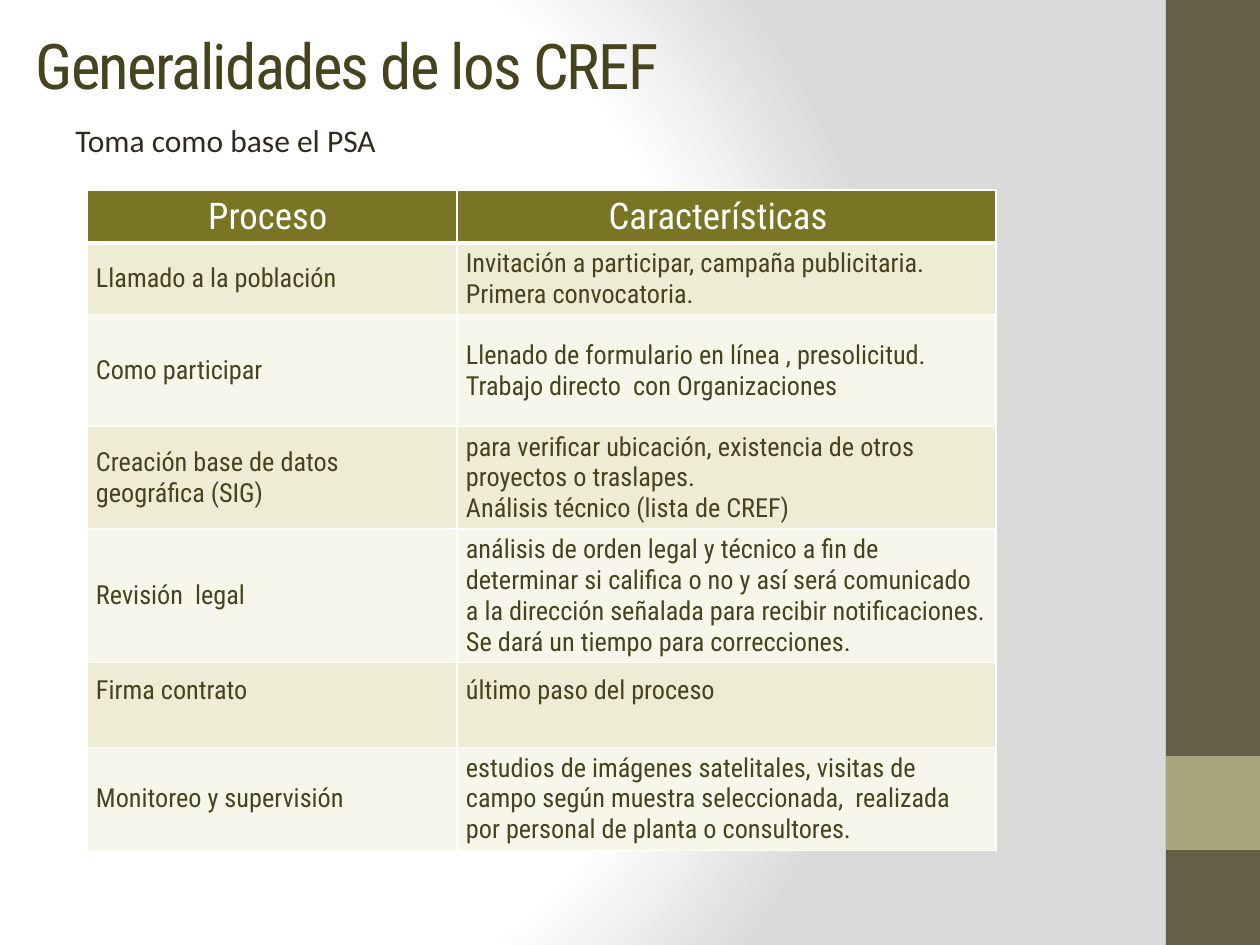
import pptx
import pptx.util
import pptx.oxml
import pptx.dml.color
import pptx.enum.shapes
import pptx.enum.text
import lxml.etree

RGB = pptx.dml.color.RGBColor
ALIGN = pptx.enum.text.PP_ALIGN
MIDDLE = pptx.enum.text.MSO_ANCHOR.MIDDLE
FIT = pptx.enum.text.MSO_AUTO_SIZE

WHITE = RGB(0xFF, 0xFF, 0xFF)
GREY = RGB(0xDA, 0xDA, 0xDA)
BROWN = RGB(0x67, 0x5E, 0x47)
SAGE = RGB(0xA9, 0xA5, 0x7C)
OLIVE = RGB(0x7A, 0x74, 0x25)
CREAM = RGB(0xEE, 0xEC, 0xD4)
PALE = RGB(0xF7, 0xF6, 0xEB)
MOSS = RGB(0x46, 0x43, 0x1F)
DARK = RGB(0x2F, 0x2B, 0x20)

HEAD = "Roboto Condensed"
BODY = "Calibri"
SCALE = 914400 / 126
NS = "http://schemas.openxmlformats.org/drawingml/2006/main"
NS_P = "http://schemas.openxmlformats.org/presentationml/2006/main"

COLS = [370, 539]
HEIGHTS = [52, 71, 112, 101, 133, 85, 103]
LOW_ROW = 5
ROWS = [
    (["Proceso "], ["Características  "]),
    (["Llamado a la población"],
     ["Invitación a participar, campaña publicitaria. Primera convocatoria."]),
    (["Como participar"],
     ["Llenado de formulario en línea , presolicitud.",
      "Trabajo directo  con Organizaciones"]),
    (["Creación base de datos geográfica (SIG)"],
     ["para verificar ubicación, existencia de otros  proyectos o traslapes.",
      "Análisis técnico (lista de CREF)"]),
    (["Revisión  legal"],
     ["análisis de orden legal y técnico a fin de determinar si califica o no "
      "y así será comunicado a la dirección señalada para recibir "
      "notificaciones. Se dará un tiempo para correcciones."]),
    (["Firma contrato"], ["último paso del proceso"]),
    (["Monitoreo y supervisión"],
     ["estudios de imágenes satelitales, visitas de campo según muestra "
      "seleccionada,  realizada por personal de planta o consultores."]),
]


def px(n):
    return pptx.util.Emu(round(n * SCALE))


def place(item, *box):
    item.left, item.top, item.width, item.height = map(px, box)


def write(frame, lines, size, font, color, align=ALIGN.LEFT):
    for i, line in enumerate(lines):
        para = frame.add_paragraph() if i else frame.paragraphs[0]
        para.alignment = align
        run = para.add_run()
        run.text = line
        run.font.size = pptx.util.Pt(size)
        run.font.name = font
        run.font.bold = False
        run.font.color.rgb = color


def paint_back(slide):
    stops = "".join(
        f'<a:gs pos="{pos * 1000}"><a:srgbClr val="{color}"/></a:gs>'
        for pos, color in [(0, WHITE), (75, WHITE), (100, GREY)])
    back = pptx.oxml.parse_xml(
        f'<p:bg xmlns:p="{NS_P}" xmlns:a="{NS}"><p:bgPr>'
        f'<a:gradFill rotWithShape="1"><a:gsLst>{stops}</a:gsLst>'
        '<a:path path="circle"><a:fillToRect l="20000" t="50000" '
        'r="100000" b="50000"/></a:path></a:gradFill>'
        '<a:effectLst/></p:bgPr></p:bg>')
    slide._element.cSld.insert(0, back)


def add_band(slide, color, *box):
    band = slide.shapes.add_shape(
        pptx.enum.shapes.MSO_SHAPE.RECTANGLE, *map(px, box))
    band.shadow.inherit = False
    band.fill.solid()
    band.fill.fore_color.rgb = color
    band.line.fill.background()


def add_title(slide):
    title = slide.shapes.title
    place(title, 23, 16, 1040, 96)
    frame = title.text_frame
    frame.auto_size = FIT.NONE
    frame.vertical_anchor = MIDDLE
    write(frame, ["Generalidades de los CREF"], 36, HEAD, MOSS)
    frame.paragraphs[0].runs[0].font._element.set("spc", "-100")


def add_note(slide):
    note = slide.shapes.add_textbox(*map(px, (63, 115, 329, 50)))
    frame = note.text_frame
    frame.word_wrap = False
    frame.auto_size = FIT.SHAPE_TO_FIT_TEXT
    write(frame, ["Toma como base el PSA"], 18, BODY, DARK)


def add_edge(cell, side, width):
    props = cell._tc.get_or_add_tcPr()
    edge = lxml.etree.Element(
        f"{{{NS}}}ln{side}", w=str(pptx.util.Pt(width)))
    fill = lxml.etree.SubElement(edge, f"{{{NS}}}solidFill")
    lxml.etree.SubElement(fill, f"{{{NS}}}srgbClr", val=str(WHITE))
    props.insert("LRTB".index(side), edge)


def fill_cell(cell, row, lines):
    cell.vertical_anchor = MIDDLE
    cell.margin_left = cell.margin_right = px(9)
    cell.margin_top = px(5)
    cell.margin_bottom = px(35 if row == LOW_ROW else 5)
    cell.fill.solid()
    if row == 0:
        cell.fill.fore_color.rgb = OLIVE
        write(cell.text_frame, lines, 21, HEAD, WHITE, ALIGN.CENTER)
    else:
        cell.fill.fore_color.rgb = CREAM if row % 2 else PALE
        write(cell.text_frame, lines, 15, HEAD, MOSS)
    for side in "LRTB":
        thick = (row, side) in [(0, "B"), (1, "T")]
        add_edge(cell, side, 3 if thick else 1)


def add_grid(slide):
    box = map(px, (87, 190, sum(COLS), sum(HEIGHTS)))
    grid = slide.shapes.add_table(len(ROWS), len(COLS), *box).table
    for col, width in zip(grid.columns, COLS):
        col.width = px(width)
    for r, texts in enumerate(ROWS):
        grid.rows[r].height = px(HEIGHTS[r])
        for c, lines in enumerate(texts):
            fill_cell(grid.cell(r, c), r, lines)


def main():
    deck = pptx.Presentation()
    deck.slide_width, deck.slide_height = px(1260), px(945)
    slide = deck.slides.add_slide(deck.slide_layouts[5])
    paint_back(slide)
    add_band(slide, BROWN, 1166, 0, 94, 945)
    add_band(slide, SAGE, 1166, 756, 94, 94)
    add_grid(slide)
    add_title(slide)
    add_note(slide)
    deck.save("out.pptx")


if __name__ == "__main__":
    main()
